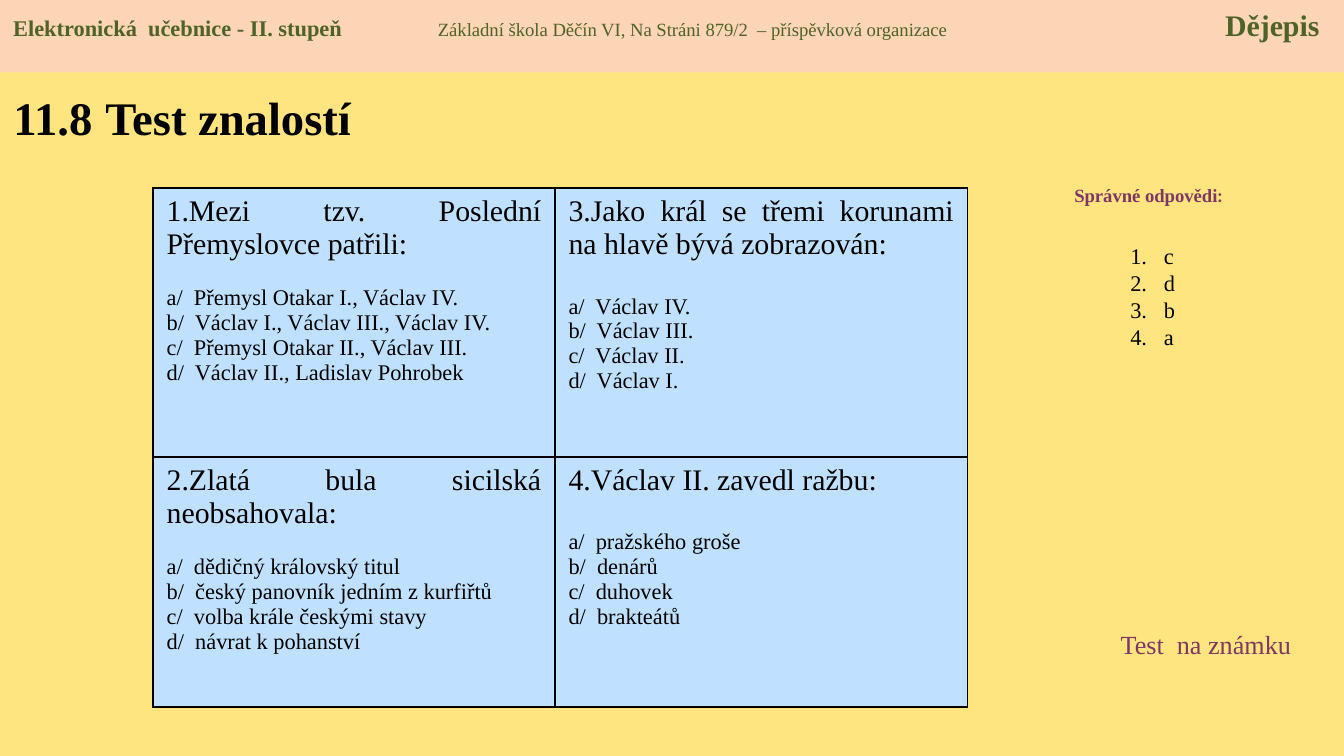
from lxml import etree
from pptx import Presentation
from pptx.dml.color import RGBColor
from pptx.enum import shapes, text
from pptx.oxml import ns
from pptx.util import Inches, Pt

COLORS = {
    "background": "FFE580",
    "band": "FCD5B5",
    "green": "4F6228",
    "purple": "813763",
    "cell": "BFE1FF",
    "black": "000000",
}
SERIF = "Times New Roman"

# Each question: heading, gap before the options in points, options
QUESTIONS = [
    [
        ("1.Mezi tzv. Poslední Přemyslovce patřili:", 13.2,
         ["Přemysl Otakar I., Václav IV.", "Václav I., Václav III., Václav IV.",
          "Přemysl Otakar II., Václav III.", "Václav II., Ladislav Pohrobek"]),
        ("3.Jako král se třemi korunami na hlavě bývá zobrazován:", 17.6,
         ["Václav IV.", "Václav III.", "Václav II.", "Václav I."]),
    ],
    [
        ("2.Zlatá bula sicilská neobsahovala:", 13.2,
         ["dědičný královský titul", "český panovník jedním z kurfiřtů",
          "volba krále českými stavy", "návrat k pohanství"]),
        ("4.Václav II. zavedl ražbu:", 17.6,
         ["pražského groše", "denárů", "duhovek", "brakteátů"]),
    ],
]


def rgb(name):
    return RGBColor.from_string(COLORS[name])


def add_xml(parent, tag, **attributes):
    return etree.SubElement(parent, ns.qn(tag), attributes)


def place(shape, left, top, width, height):
    shape.left, shape.top = Inches(left), Inches(top)
    shape.width, shape.height = Inches(width), Inches(height)


class TestSlide:
    """Holds the style and the current slide."""

    def __init__(self, slide):
        self.slide = slide
        slide.background.fill.solid()
        slide.background.fill.fore_color.rgb = rgb("background")

    def style(self, paragraph, size, color="black", bold=False):
        for run in paragraph.runs:
            self.style_run(run, size, color, bold)

    def style_run(self, run, size, color="black", bold=False, font=SERIF):
        run.font.name, run.font.size, run.font.bold = font, Pt(size), bold
        run.font.color.rgb = rgb(color)

    def add_run(self, paragraph, wording, *look, **more):
        run = paragraph.add_run()
        run.text = wording
        self.style_run(run, *look, **more)

    def title(self, number, wording, *box):
        title = self.slide.shapes.title
        place(title, *box)
        frame = title.text_frame
        frame.vertical_anchor = text.MSO_ANCHOR.MIDDLE
        heading = frame.paragraphs[0]
        heading.alignment = text.PP_ALIGN.LEFT
        for part, size in ((number, 25), (" ", 28), (wording, 25)):
            self.add_run(heading, part, size, bold=True)

    def label(self, *box):
        """Adds a wrapping text box and returns its first paragraph."""
        frame = self.slide.shapes.add_textbox(*map(Inches, box)).text_frame
        frame.word_wrap = True
        return frame.paragraphs[0]

    def numbered_list(self, items, *box):
        body = self.slide.placeholders[1]
        place(body, *box)
        body.text_frame.text = "\n".join(items)
        body.text_frame.auto_size = text.MSO_AUTO_SIZE.NONE
        for item in body.text_frame.paragraphs:
            item.space_before = Pt(0)
            item.line_spacing = Pt(14.5)
            self.style(item, 12)
            properties = item._p.get_or_add_pPr()
            properties.set("marL", str(Inches(0.25)))
            properties.set("indent", str(Inches(-0.25)))
            add_xml(properties, "a:buFont", typeface=SERIF)
            add_xml(properties, "a:buAutoNum", type="arabicPeriod")

    def header(self, parts, tabs, *box):
        band = self.slide.shapes.add_shape(
            shapes.MSO_SHAPE.RECTANGLE, *map(Inches, box))
        band.shadow.inherit = False
        band.fill.solid()
        band.fill.fore_color.rgb = rgb("band")
        band.line.fill.background()
        band.text_frame.vertical_anchor = text.MSO_ANCHOR.TOP
        line = band.text_frame.paragraphs[0]
        line.alignment = text.PP_ALIGN.LEFT
        stops = add_xml(line._p.get_or_add_pPr(), "a:tabLst")
        for position, side in tabs:
            add_xml(stops, "a:tab", pos=str(Inches(position)), algn=side)
        for index, (wording, size, bold) in enumerate(parts):
            tab = "\t" if index else ""
            self.add_run(line, tab + wording, size, "green", bold)

    def question_table(self, questions, left, top, widths, heights):
        table = self.slide.shapes.add_table(
            len(heights), len(widths), Inches(left), Inches(top),
            Inches(sum(widths)), Inches(sum(heights))).table
        table.first_row = table.horz_banding = False
        for column, width in zip(table.columns, widths):
            column.width = Inches(width)
        for row, height, row_questions in zip(table.rows, heights, questions):
            row.height = Inches(height)
            for cell, question in zip(row.cells, row_questions):
                self.question(cell, *question)

    def question(self, cell, heading, gap, options):
        lettered = [f"{letter}/  {option}" for letter, option in zip("abcd", options)]
        cell.text_frame.text = "\n".join([heading, *lettered])
        for index, paragraph in enumerate(cell.text_frame.paragraphs):
            paragraph.alignment = text.PP_ALIGN.JUSTIFY
            self.style(paragraph, 12 if index else 16)
            if index == 1:
                paragraph.space_before = Pt(gap)
        properties = cell._tc.get_or_add_tcPr()
        for side in ("L", "R", "T", "B"):
            border = add_xml(properties, f"a:ln{side}", w=str(Pt(1)))
            add_xml(add_xml(border, "a:solidFill"), "a:srgbClr", val=COLORS["black"])
        cell.fill.solid()
        cell.fill.fore_color.rgb = rgb("cell")


def main():
    deck = Presentation()
    deck.slide_width = Inches(10)
    deck.slide_height = deck.slide_width * 9 // 16
    page = TestSlide(deck.slides.add_slide(deck.slide_layouts[1]))

    page.title("11.8", "Test znalostí", 0, 0.53, 3.62, 0.65)

    answers = page.label(7.76, 1.32, 1.57, 0.27)
    answers.alignment = text.PP_ALIGN.CENTER
    page.add_run(answers, "Správné odpovědi", 10, "purple", True)
    page.add_run(answers, ":", 10, "purple", True, font="Calibri")

    page.question_table(QUESTIONS, 1.14, 1.4, (2.99, 3.07), (2, 1.86))
    page.numbered_list("cdba", 8.31, 1.75, 0.55, 1.11)

    graded = page.label(8.24, 4.63, 1.57, 0.34)
    page.add_run(graded, "Test  na známku", 14, "purple")

    page.header(
        [("Elektronická  učebnice - II. stupeň", 12, True),
         ("Základní škola Děčín VI, Na Stráni 879/2  – příspěvková organizace", 10, False),
         ("Dějepis", 16, True)],
        [(3.16, "l"), (9.72, "r")],
        0, 0, 10, 0.54)

    deck.save("out.pptx")


if __name__ == "__main__":
    main()
